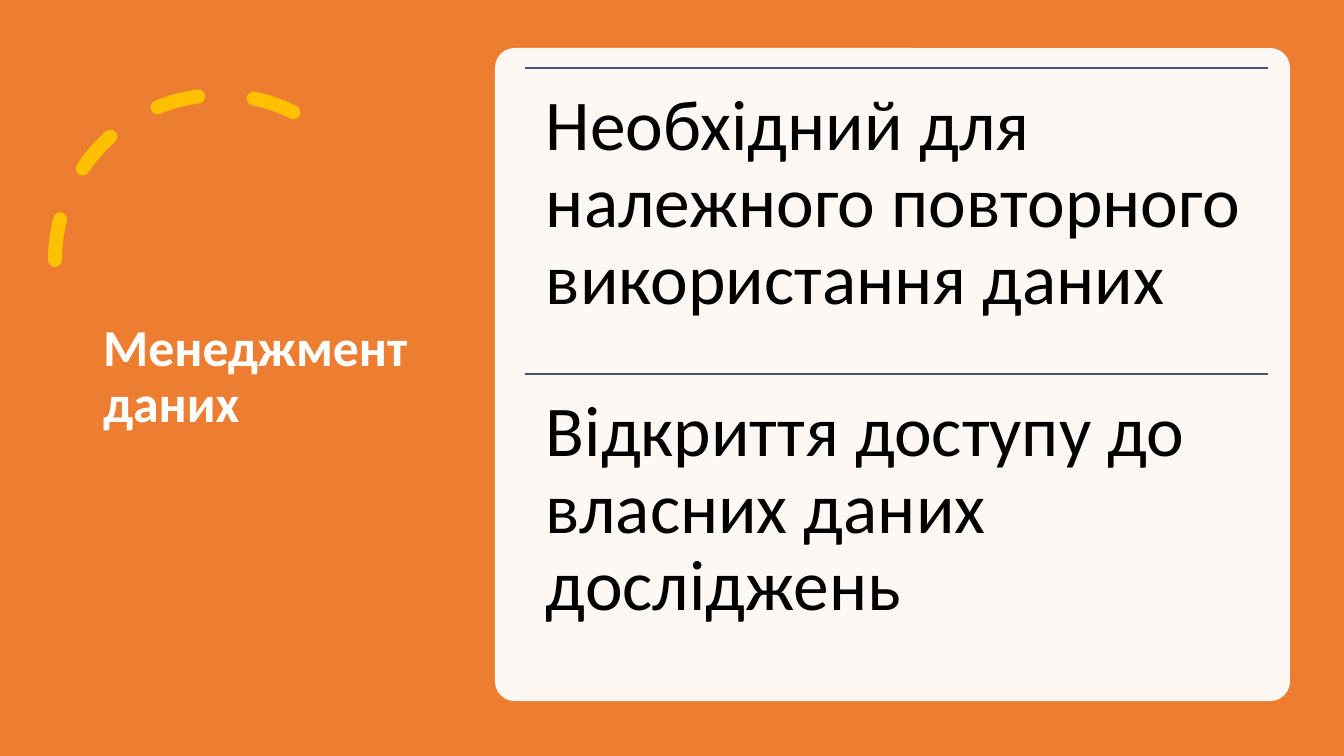
from pptx import Presentation
from pptx import util as u
from pptx.dml.color import RGBColor
from pptx.enum import dml, shapes, text
from pptx.oxml import ns, xmlchemy

SCALE = 914400 / 100.8
HUES = {"back": "ED7D31", "arc": "FFC000", "card": "FFFFFF",
        "rule": "44546A", "title": "FFFFFF", "body": "000000"}
POINTS = ["Необхідний для належного повторного використання даних",
          "Відкриття доступу до власних даних досліджень"]


def px(*sizes):
    """Turn px lengths into EMU."""
    return [u.Emu(round(s * SCALE)) for s in sizes]


def hue(name):
    """Look up a named colour."""
    return RGBColor.from_string(HUES[name])


def put(item, **values):
    """Set attributes from format values."""
    for key, value in values.items():
        setattr(item, key, value)


def shape(slide, kind, box, fill=None):
    """Add a flat preset shape without an outline."""
    item = slide.shapes.add_shape(kind, *px(*box))
    item.shadow.inherit = False
    item.line.fill.background()
    if fill:
        item.fill.solid()
        item.fill.fore_color.rgb = hue(fill)
    else:
        item.fill.background()
    return item


def write(item, words, size, color, bold=False, **frame):
    """Write one formatted paragraph into a frame."""
    put(item.text_frame, word_wrap=True, auto_size=text.MSO_AUTO_SIZE.NONE, **frame)
    para = item.text_frame.paragraphs[0]
    put(para, line_spacing=0.9, alignment=text.PP_ALIGN.LEFT)
    run = para.add_run()
    run.text = words
    put(run.font, name="Calibri", size=u.Pt(size), bold=bold)
    run.font.color.rgb = hue(color)


def side(slide, box):
    """Place the dashed arc and the title."""
    x, y, w, h = box
    arc = shape(slide, shapes.MSO_SHAPE.ARC, (x, y + 24, 330, 330))
    arc.adjustments[0] = 146.13
    arc.adjustments[1] = 0
    arc.element.spPr.xfrm.set("flipH", "1")
    arc.line.color.rgb = hue("arc")
    put(arc.line, width=u.Pt(10), dash_style=dml.MSO_LINE.DASH)
    arc.line._get_or_add_ln().set("cap", "rnd")
    title = slide.shapes.title
    slide.shapes._spTree.append(title.element)
    put(title, **dict(zip(("left", "top", "width", "height"),
                          px(x + 38, y, w - 38, h))))
    write(title, "Менеджмент даних", 37, "title", True,
          vertical_anchor=text.MSO_ANCHOR.MIDDLE)


def rule(slide, x, y, w):
    """Draw a thin level line."""
    line = slide.shapes.add_connector(shapes.MSO_CONNECTOR.STRAIGHT,
                                      *px(x, y, x + w, y))
    line.line.color.rgb = hue("rule")
    line.line.width = u.Pt(1)
    line.element.spPr.append(xmlchemy.OxmlElement("a:effectLst"))


def card(slide, box):
    """Place the card with equal ruled rows of text."""
    x, y, w, h = box
    pane = shape(slide, shapes.MSO_SHAPE.ROUNDED_RECTANGLE, box, "card")
    pane.adjustments[0] = 0.03
    tint = pane.element.spPr.find(".//" + ns.qn("a:srgbClr"))
    alpha = xmlchemy.OxmlElement("a:alpha")
    alpha.set("val", "95000")
    tint.append(alpha)
    left, top, wide, tall = x + 30, y + 20, w - 52, 306
    inset, = px(21)
    edges = ("left", "top", "right", "bottom")
    for row, words in enumerate(POINTS):
        level = top + row * tall
        rule(slide, left, level, wide)
        body = slide.shapes.add_textbox(*px(left, level, wide, tall))
        write(body, words, 51, "body", vertical_anchor=text.MSO_ANCHOR.TOP,
              **{f"margin_{edge}": inset for edge in edges})


def main():
    """Build and save the slide."""
    deck = Presentation()
    deck.slide_width, deck.slide_height = px(1344, 756)
    slide = deck.slides.add_slide(deck.slide_layouts[5])
    shape(slide, shapes.MSO_SHAPE.RECTANGLE, (0, 0, 1344, 756), "back")
    side(slide, (55, 71, 363, 614))
    card(slide, (495, 48, 795, 653))
    deck.save("out.pptx")


if __name__ == "__main__":
    main()
